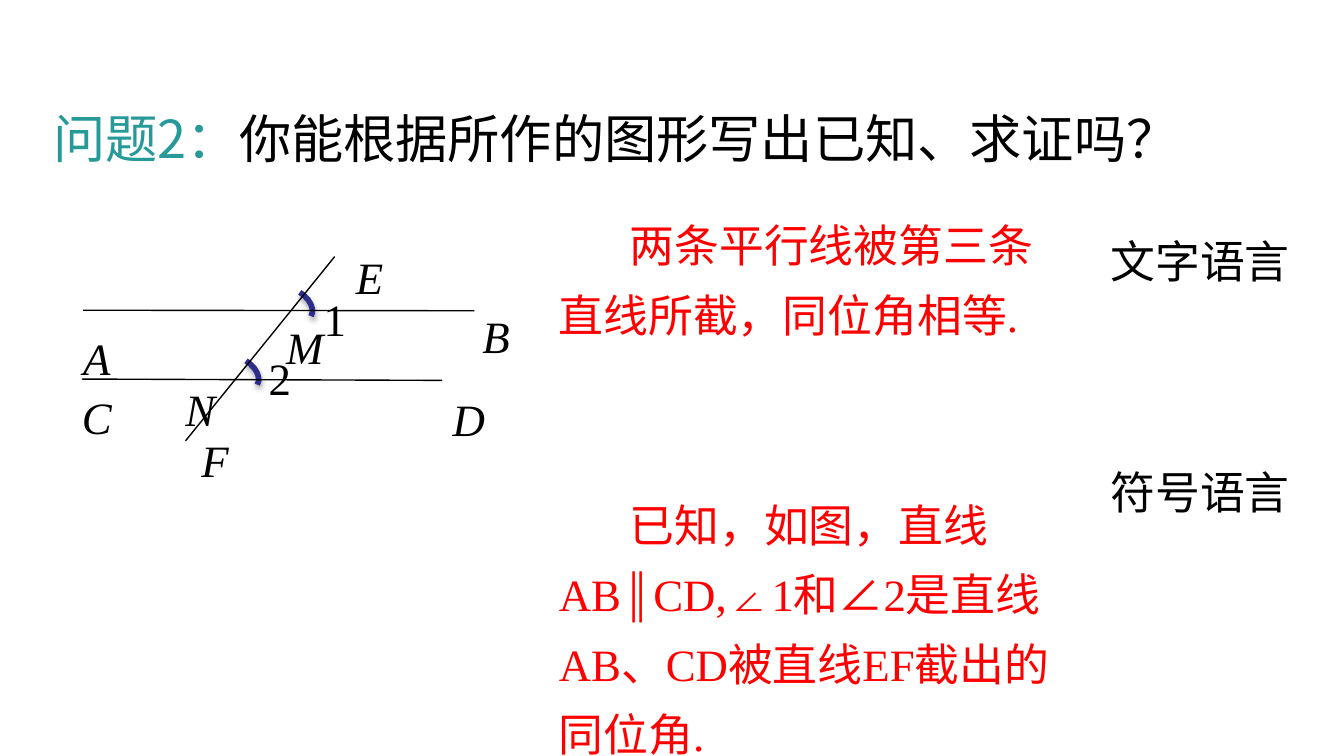
from lxml.etree import SubElement
from pptx import Presentation
from pptx.dml.color import RGBColor
from pptx.enum.shapes import MSO_CONNECTOR, MSO_SHAPE
from pptx.enum.text import PP_ALIGN
from pptx.oxml.ns import qn
from pptx.util import Pt

BLACK = RGBColor(0x00, 0x00, 0x00)
RED = RGBColor(0xFF, 0x00, 0x00)
TEAL = RGBColor(0x26, 0x99, 0x99)
NAVY = RGBColor(0x2D, 0x2D, 0x8A)
SERIF = "Times New Roman"
SANS = "Noto Sans CJK SC"

prs = Presentation()
prs.slide_width, prs.slide_height = Pt(720), Pt(405)
slide = prs.slides.add_slide(prs.slide_layouts[6])
shapes = slide.shapes


def add_text_frame(left, top, width, height):
    frame = shapes.add_textbox(Pt(left), Pt(top), Pt(width), Pt(height)).text_frame
    frame.word_wrap = True
    return frame


def style(paragraph, size, face, color=None):
    paragraph.font.size = Pt(size)
    paragraph.font.name = face
    if color is not None:
        paragraph.font.color.rgb = color


question = add_text_frame(21.6, 36.7, 653.8, 58.3).paragraphs[0]
question.line_spacing = 1.5
style(question, 28, SANS)
for words, color in [("问题2：", TEAL), ("你能根据所作的图形写出已知、求证吗？", BLACK)]:
    run = question.add_run()
    run.text = words
    run.font.color.rgb = color

answer = add_text_frame(292.3, 104.4, 283.7, 300)
theorem = answer.paragraphs[0]
given = answer.add_paragraph()
given.space_before = Pt(75)
for paragraph, pieces in [
    (theorem, ["两条平行线被第三条直线所截，同位角相等."]),
    (given, ["已知，如图，直线AB", "∥", "CD,∠1和∠2是直线AB、CD被直线EF截出的同位角."]),
]:
    paragraph.line_spacing = 1.3
    paragraph._p.get_or_add_pPr().set("indent", str(Pt(38)))
    style(paragraph, 24, SERIF, RED)
    for piece in pieces:
        run = paragraph.add_run()
        run.text = piece
        if piece == "∥":
            run.font.italic = True

for language, top in [("文字语言", 121.7), ("符号语言", 245.5)]:
    heading = add_text_frame(586.8, top, 112.3, 36).paragraphs[0]
    heading.text = language
    heading.alignment = PP_ALIGN.CENTER
    style(heading, 24, SERIF, BLACK)

for left, top in [(144.7, 155.5), (115.9, 192.2)]:
    angle_mark = shapes.add_shape(MSO_SHAPE.ARC, Pt(left), Pt(top), Pt(23.8), Pt(15.1))
    angle_mark.rotation = 32.2
    angle_mark.fill.background()
    angle_mark.line.color.rgb = NAVY
    angle_mark.line.width = Pt(3)
    angle_mark.shadow.inherit = False
    effects = angle_mark._element.spPr.find(qn("a:effectLst"))
    shadow = SubElement(effects, qn("a:outerShdw"), blurRad=str(Pt(3.1)),
                        dist=str(Pt(1.8)), dir="5400000", rotWithShape="0")
    shade = SubElement(shadow, qn("a:srgbClr"), val="000000")
    SubElement(shade, qn("a:alpha"), val="35000")

for x1, y1, x2, y2 in [
    (179.3, 137.5, 99.4, 236.2),
    (254.2, 166.5, 44.6, 166.2),
    (236.9, 203.8, 43.9, 203.1),
]:
    line = shapes.add_connector(MSO_CONNECTOR.STRAIGHT, Pt(x1), Pt(y1), Pt(x2), Pt(y2))
    line.line.color.rgb = BLACK
    line.line.width = Pt(0.75)
    SubElement(line._element.spPr, qn("a:effectLst"))

for letter, left, top in [
    ("A", 37.4, 173.5), ("B", 251.3, 162), ("C", 36.7, 205.2), ("D", 235.4, 206.6),
    ("E", 183.6, 130.3), ("F", 100.8, 228.2), ("M", 146.2, 167.8), ("N", 92.2, 200.9),
    ("1", 166.3, 152.6), ("2", 136.8, 184.3),
]:
    label = add_text_frame(left, top, 25.2, 36).paragraphs[0]
    label.text = letter
    label.font.italic = letter.isalpha()
    style(label, 24, SERIF, BLACK)

prs.save("out.pptx")
